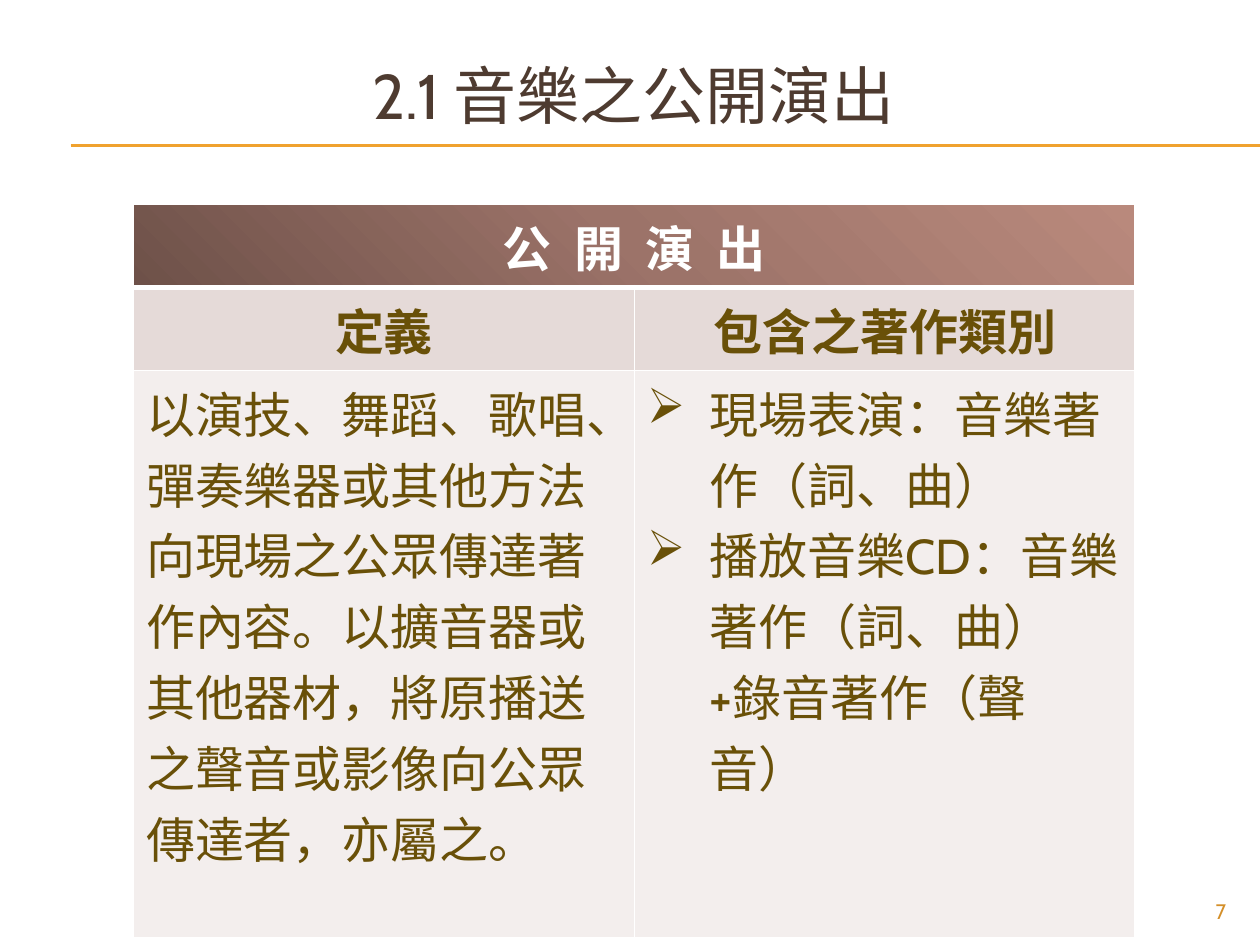
from lxml import etree
from pptx import Presentation
from pptx.dml.color import RGBColor
from pptx.enum.shapes import MSO_CONNECTOR
from pptx.enum.text import MSO_ANCHOR, PP_ALIGN
from pptx.oxml.ns import qn
from pptx.util import Inches, Pt

COLORS = {
    "title": "4E3B30",
    "rule": "F0A22E",
    "number": "D48F29",
    "white": "FFFFFF",
    "text": "695008",
    "heading_fill": "E5DAD8",
    "body_fill": "F3EEED",
}
HEADER_STOPS = [(0, "6E5149"), (50, "9C7369"), (100, "B9897C")]
FONT = "Cabin"


def add_child(parent, tag, **attributes):
    return etree.SubElement(parent, qn(tag), attributes)


class SlideBuilder:
    def __init__(self, page):
        self.page = page

    def style(self, para, size, color, align=PP_ALIGN.LEFT, bold=False):
        para.alignment = align
        para.font.name = FONT
        para.font.size = Pt(size)
        para.font.bold = bold
        para.font.color.rgb = RGBColor.from_string(COLORS[color])

    def rule(self, left, right, top):
        line = self.page.shapes.add_connector(
            MSO_CONNECTOR.STRAIGHT,
            Inches(left), Inches(top), Inches(right), Inches(top))
        line.line.color.rgb = RGBColor.from_string(COLORS["rule"])
        line.line.width = Pt(0.75)
        add_child(line._element.spPr, "a:effectLst")

    def text(self, left, top, width, height, content, size, color, align,
             anchor=MSO_ANCHOR.TOP):
        box = self.page.shapes.add_textbox(
            Inches(left), Inches(top), Inches(width), Inches(height))
        frame = box.text_frame
        frame.word_wrap = True
        frame.vertical_anchor = anchor
        frame.text = content
        self.style(frame.paragraphs[0], size, color, align)

    def table(self, left, top, widths, heights):
        shape = self.page.shapes.add_table(
            len(heights), len(widths), Inches(left), Inches(top),
            Inches(sum(widths)), Inches(sum(heights)))
        table = shape.table
        table.horz_banding = False
        for column, width in zip(table.columns, widths):
            column.width = Inches(width)
        for row, height in zip(table.rows, heights):
            row.height = Inches(height)
        return table

    def cell(self, cell, lines, color="text", fill=None, align=PP_ALIGN.LEFT,
             bold=False, bullet=None):
        cell.text = "\n".join(lines)
        for para in cell.text_frame.paragraphs:
            self.style(para, 28, color, align, bold)
            if bullet:
                self.bullet(para, bullet)
        if fill:
            cell.fill.solid()
            cell.fill.fore_color.rgb = RGBColor.from_string(COLORS[fill])

    def bullet(self, para, mark):
        properties = para._p.get_or_add_pPr()
        properties.set("marL", str(Inches(0.5)))
        properties.set("indent", str(Inches(-0.5)))
        mark_element = etree.Element(qn("a:buChar"), char=mark)
        properties.insert(0, mark_element)

    def gradient(self, cell, stops, angle):
        fill = add_child(cell._tc.get_or_add_tcPr(), "a:gradFill")
        stop_list = add_child(fill, "a:gsLst")
        for position, color in stops:
            stop = add_child(stop_list, "a:gs", pos=str(position * 1000))
            add_child(stop, "a:srgbClr", val=color)
        add_child(fill, "a:lin", ang=str(angle * 60000), scaled="0")

    def borders(self, cell, bottom=1):
        properties = cell._tc.get_or_add_tcPr()
        sides = [("L", 1), ("R", 1), ("T", 1), ("B", bottom)]
        for index, (side, width) in enumerate(sides):
            line = etree.Element(qn(f"a:ln{side}"), w=str(Pt(width)))
            solid = add_child(line, "a:solidFill")
            add_child(solid, "a:srgbClr", val=COLORS["white"])
            properties.insert(index, line)


def main():
    deck = Presentation()
    deck.slide_width, deck.slide_height = Inches(10), Inches(7.5)
    builder = SlideBuilder(deck.slides.add_slide(deck.slide_layouts[6]))

    # Title and the double rule under it
    for top in (1.15, 1.16):
        builder.rule(0.56, 10, top)
    builder.text(0.28, 0.29, 9.5, 0.92, "2.1 音樂之公開演出", 36, "title",
                 PP_ALIGN.CENTER, MSO_ANCHOR.MIDDLE)

    # Table header across both columns, letters spread apart
    table = builder.table(1.06, 1.62, [7.95 / 2] * 2, [0.66, 0.66, 4.5])
    header = table.cell(0, 0)
    header.merge(table.cell(0, 1))
    builder.cell(header, ["公 開 演 出"], "white",
                 align=PP_ALIGN.CENTER, bold=True)
    span = header.text_frame.paragraphs[0].runs[0]
    span._r.get_or_add_rPr().set("spc", "330")
    builder.gradient(header, HEADER_STOPS, 315)

    # Column headings
    for column, heading in enumerate(["定義", "包含之著作類別"]):
        builder.cell(table.cell(1, column), [heading], fill="heading_fill",
                     align=PP_ALIGN.CENTER, bold=True)

    # Definition and kinds of works
    builder.cell(table.cell(2, 0), [
        "以演技、舞蹈、歌唱、彈奏樂器或其他方法向現場之公眾傳達著作內容。"
        "以擴音器或其他器材，將原播送之聲音或影像向公眾傳達者，亦屬之。",
    ], fill="body_fill")
    builder.cell(table.cell(2, 1), [
        "現場表演：音樂著作（詞、曲）",
        "播放音樂CD：音樂著作（詞、曲）+錄音著作（聲音）",
    ], fill="body_fill", bullet="➢")

    # White cell borders, thicker below the header
    for index, row in enumerate(table.rows):
        for cell in row.cells:
            builder.borders(cell, bottom=3 if index == 0 else 1)

    # Page number
    builder.text(9, 7.08, 0.83, 0.27, "7", 12, "number", PP_ALIGN.RIGHT)

    deck.save("out.pptx")


if __name__ == "__main__":
    main()
